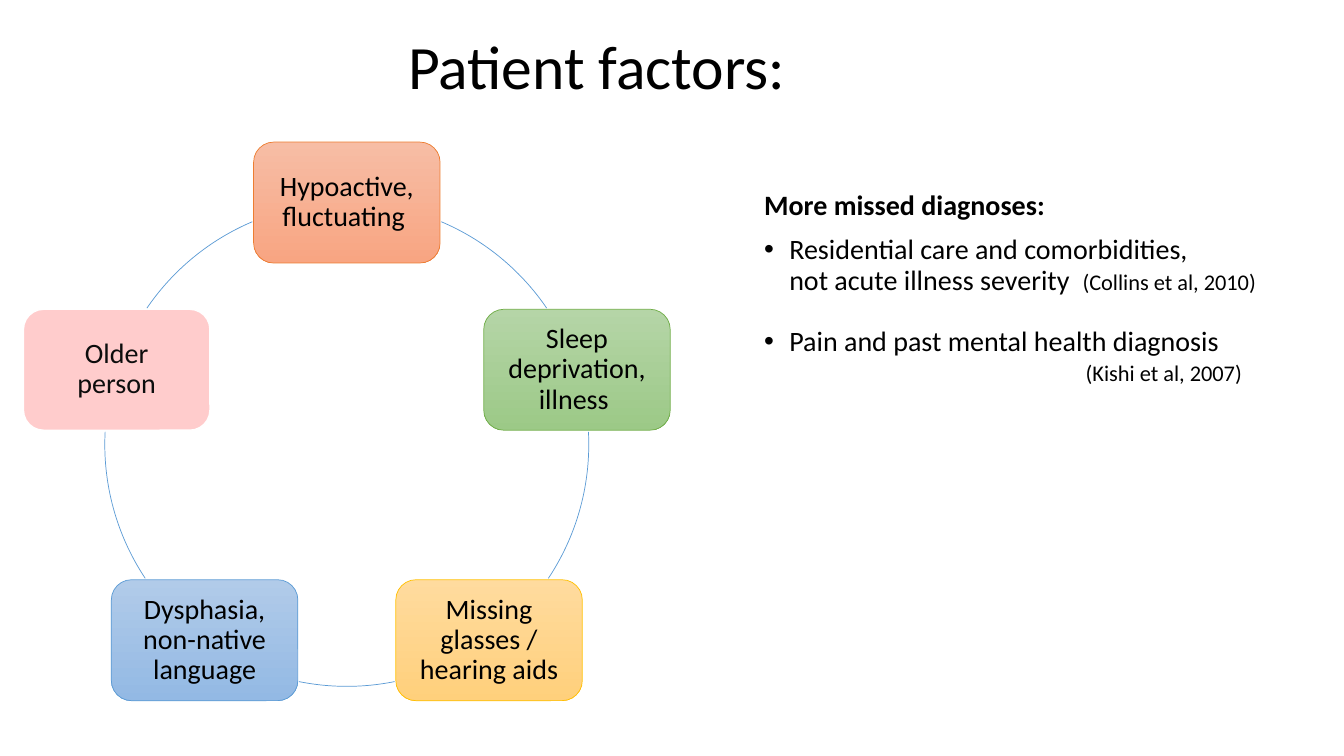
from math import cos, radians, sin

from lxml.etree import SubElement
from pptx import Presentation
from pptx.dml.color import RGBColor
from pptx.enum.shapes import MSO_SHAPE
from pptx.enum.text import MSO_ANCHOR, PP_ALIGN
from pptx.oxml.ns import qn
from pptx.util import Inches, Pt

TITLE = "Patient factors: "

# text, fill colours from top to bottom, line colour, line width, text colour
FACTORS = [
    ("Hypoactive, fluctuating ", ["F7BDA5", "F8A582"], "ED7D31", 0.5, "000000"),
    ("Sleep deprivation, illness ", ["B5D5A7", "9CC987"], "70AD47", 0.5, "000000"),
    ("Missing glasses / hearing aids", ["FFDB9E", "FFD07C"], "FFC000", 0.5, "000000"),
    ("Dysphasia, non-native language", ["B1CBE9", "93B9E4"], "5B9BD5", 0.5, "000000"),
    ("Older person", ["FFCCCC"], "FFFFFF", 1, "0D0D0D"),
]
# start and end of each arc, in degrees clockwise from the right
ARCS = [(293, 325.7), (357, 33.6), (78.6, 101.4), (146.4, 183), (214.3, 247)]
ARC_COLOR = "5B9BD5"

# runs (text, size, bold), left margin, bulleted, space before, space after
DIAGNOSES = [
    ([("More missed diagnoses:", 20, True)], 0, False, 10, 0),
    ([("Residential care and comorbidities,\vnot acute illness severity  ", 20, False),
      ("(Collins et al, 2010)", 16, False)], 0.25, True, 10, 12),
    ([("Pain and past mental health diagnosis", 20, False)], 0.25, True, 10, 0),
    ([("(Kishi et al, 2007)", 16, False)], 3.19, False, 3.5, 12),
]

CENTER_X, CENTER_Y, RADIUS = 3.44, 4.41, 2.4
BOX_WIDTH, BOX_HEIGHT = 1.85, 1.2


def color(hex_text):
    return RGBColor.from_string(hex_text)


def add_text(para, text, size, hex_text="000000", bold=False):
    para.line_spacing = 0.9
    span = para.add_run()
    span.text = text
    for name, value in {"name": "Calibri", "size": Pt(size), "bold": bold}.items():
        setattr(span.font, name, value)
    span.font.color.rgb = color(hex_text)


def place(shape, left, top, width, height):
    for name, value in zip(("left", "top", "width", "height"), (left, top, width, height)):
        setattr(shape, name, Inches(value))


def indent(para, margin, bulleted):
    properties = para._p.get_or_add_pPr()
    properties.set("marL", str(Inches(margin)))
    properties.set("indent", str(Inches(-margin) if bulleted else 0))
    if bulleted:
        SubElement(properties, qn("a:buFont"), typeface="Arial")
        SubElement(properties, qn("a:buChar"), char="•")


def add_arc(page, start, end):
    arc = page.shapes.add_shape(
        MSO_SHAPE.ARC, Inches(CENTER_X - RADIUS), Inches(CENTER_Y - RADIUS),
        Inches(2 * RADIUS), Inches(2 * RADIUS))
    # angles are stored in 60000ths of a degree, adjustments in 100000ths
    arc.adjustments[0] = start * 0.6
    arc.adjustments[1] = end * 0.6
    arc.shadow.inherit = False
    arc.fill.background()
    arc.line.color.rgb = color(ARC_COLOR)
    arc.line.width = Pt(0.5)


def add_factor(page, angle, text, fills, line, line_width, text_color):
    left = CENTER_X + RADIUS * cos(angle) - BOX_WIDTH / 2
    top = CENTER_Y + RADIUS * sin(angle) - BOX_HEIGHT / 2
    box = page.shapes.add_shape(
        MSO_SHAPE.ROUNDED_RECTANGLE, Inches(left), Inches(top),
        Inches(BOX_WIDTH), Inches(BOX_HEIGHT))
    box.shadow.inherit = False
    if len(fills) > 1:
        box.fill.gradient()
        box.fill.gradient_angle = 270
        for stop, fill in zip(box.fill.gradient_stops, fills):
            stop.color.rgb = color(fill)
    else:
        box.fill.solid()
        box.fill.fore_color.rgb = color(fills[0])
    box.line.color.rgb = color(line)
    box.line.width = Pt(line_width)
    frame = box.text_frame
    frame.word_wrap = True
    frame.vertical_anchor = MSO_ANCHOR.MIDDLE
    for side in ("left", "right", "top", "bottom"):
        setattr(frame, f"margin_{side}", Inches(0.14))
    para = frame.paragraphs[0]
    para.alignment = PP_ALIGN.CENTER
    add_text(para, text, 20, text_color)


def add_diagnoses(page):
    box = page.shapes.add_textbox(Inches(7.48), Inches(1.85), Inches(5.26), Inches(4.19))
    frame = box.text_frame
    frame.word_wrap = True
    for number, (runs, margin, bulleted, before, after) in enumerate(DIAGNOSES):
        para = frame.add_paragraph() if number else frame.paragraphs[0]
        para.space_before, para.space_after = Pt(before), Pt(after)
        for text, size, bold in runs:
            lines = text.split("\v")
            for index, line in enumerate(lines):
                if index:
                    para.add_line_break()
                add_text(para, line, size, bold=bold)
        indent(para, margin, bulleted)


def main():
    deck = Presentation()
    deck.slide_width, deck.slide_height = Inches(13.33), Inches(7.5)
    page = deck.slides.add_slide(deck.slide_layouts[5])

    title = page.shapes.title
    place(title, 0.24, 0.15, 11.5, 1.08)
    title.text_frame.vertical_anchor = MSO_ANCHOR.MIDDLE
    para = title.text_frame.paragraphs[0]
    para.alignment = PP_ALIGN.CENTER
    add_text(para, TITLE, 44)

    add_diagnoses(page)
    for start, end in ARCS:
        add_arc(page, start, end)
    step = 360 / len(FACTORS)
    for number, factor in enumerate(FACTORS):
        add_factor(page, radians(number * step - 90), *factor)

    deck.save("out.pptx")


if __name__ == "__main__":
    main()
